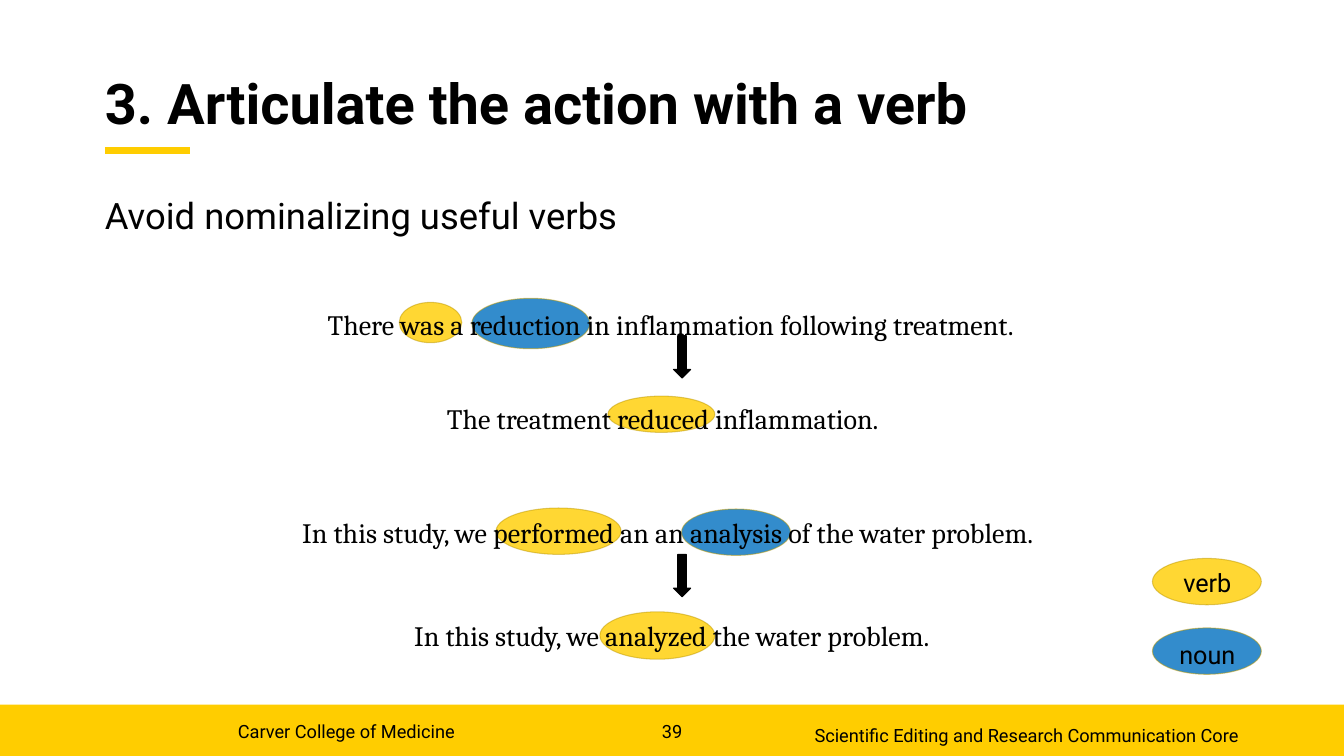
from lxml import etree
from pptx import Presentation
from pptx import util as u
from pptx.dml.color import RGBColor
from pptx.enum import shapes, text
from pptx.oxml import ns

PX = 9144
GOLD, BLUE, BLACK, OLIVE = "FFCD00", "0070C0", "000000", "BF9A00"
PADDED = (10, 5, 10, 5)


def rgb(value):
    return RGBColor.from_string(value)


def px(*values):
    return [u.Emu(v * PX) for v in values]


def set_alpha(color_format_parent, percent):
    color = color_format_parent.find(".//" + ns.qn("a:srgbClr"))
    etree.SubElement(color, ns.qn("a:alpha"), val=str(percent * 1000))


def write(sp, content, size=13, font="Roboto", color=BLACK, bold=False,
          align=text.PP_ALIGN.LEFT, anchor=text.MSO_ANCHOR.TOP,
          spacing=1.0, insets=(0, 0, 0, 0)):
    tf = sp.text_frame
    tf.word_wrap = True
    tf.vertical_anchor = anchor
    tf.margin_left, tf.margin_top, tf.margin_right, tf.margin_bottom = px(*insets)
    p = tf.paragraphs[0]
    p.alignment = align
    p.line_spacing = spacing
    r = p.add_run()
    r.text = content
    r.font.size = u.Pt(size)
    r.font.name = font
    r.font.bold = bold
    r.font.color.rgb = rgb(color)


class SlideBuilder:
    def __init__(self, prs):
        self.s = prs.slides.add_slide(prs.slide_layouts[6])

    def shape(self, kind, box, fill):
        sp = self.s.shapes.add_shape(kind, *px(*box))
        sp.shadow.inherit = False
        sp.fill.solid()
        sp.fill.fore_color.rgb = rgb(fill)
        return sp

    def bar(self, box, fill):
        self.shape(shapes.MSO_SHAPE.RECTANGLE, box, fill).line.fill.background()

    def highlight(self, box, fill):
        sp = self.shape(shapes.MSO_SHAPE.OVAL, box, fill)
        sp.line.color.rgb = rgb(OLIVE)
        sp.line.width = u.Pt(0.75)
        properties = sp._element.spPr
        set_alpha(properties.find(ns.qn("a:solidFill")), 80)
        set_alpha(properties.find(ns.qn("a:ln")), 50)

    def arrow(self, top):
        sp = self.shape(shapes.MSO_SHAPE.DOWN_ARROW, (668, top, 17, 42), BLACK)
        sp.line.color.rgb = rgb(BLACK)
        sp.line.width = u.Pt(0.75)

    def rule(self, x1, x2, y, color, width):
        line = self.s.shapes.add_connector(
            shapes.MSO_CONNECTOR.STRAIGHT, *px(x1, y, x2, y))
        line.line.color.rgb = rgb(color)
        line.line.width = u.Pt(width)
        etree.SubElement(line._element.spPr, ns.qn("a:effectLst"))

    def label(self, box, content, **style):
        write(self.s.shapes.add_textbox(*px(*box)), content, **style)

    def sentence(self, left, top, content):
        self.label((left, top, 1081, 44), content, size=20, font="Cambria",
                   align=text.PP_ALIGN.CENTER, spacing=1.1, insets=PADDED)


def main():
    prs = Presentation()
    prs.slide_width, prs.slide_height = u.Inches(13.33), u.Inches(7.5)
    slide = SlideBuilder(prs)

    slide.bar((0, 699, 1333, 51), GOLD)
    slide.rule(104, 188, 149, GOLD, 5)
    slide.label((634, 715, 65, 26), "39", align=text.PP_ALIGN.CENTER)
    slide.label((236, 715, 316, 35), "Carver College of Medicine")
    slide.label((536, 716, 692, 26),
                "Scientific Editing and Research Communication Core",
                align=text.PP_ALIGN.RIGHT, anchor=text.MSO_ANCHOR.MIDDLE)
    slide.label((104, 58, 1125, 95), "3. Articulate the action with a verb",
                size=40, bold=True, spacing=0.9, anchor=text.MSO_ANCHOR.MIDDLE)
    slide.label((104, 192, 1127, 73), "Avoid nominalizing useful verbs", size=26)

    for box, fill in (
        ((396, 300, 62, 40), GOLD),
        ((468, 296, 117, 50), BLUE),
        ((603, 393, 106, 36), GOLD),
        ((492, 504, 124, 46), GOLD),
        ((676, 505, 108, 46), BLUE),
        ((595, 607, 114, 47), GOLD),
    ):
        slide.highlight(box, fill)

    for top in (333, 550):
        slide.arrow(top)

    for left, top, content in (
        (125, 297, "There was a reduction in inflammation following treatment."),
        (117, 390, "The treatment reduced inflammation."),
        (122, 503, "In this study, we performed an an analysis of the water problem."),
        (126, 605, "In this study, we analyzed the water problem."),
    ):
        slide.sentence(left, top, content)

    for top, text_top, word, fill in ((554, 558, "verb", GOLD),
                                      (623, 629, "noun", BLUE)):
        slide.highlight((1143, top, 108, 46), fill)
        slide.label((1139, text_top, 117, 40), word, size=18,
                    align=text.PP_ALIGN.CENTER, insets=PADDED)

    prs.save("out.pptx")


if __name__ == "__main__":
    main()
